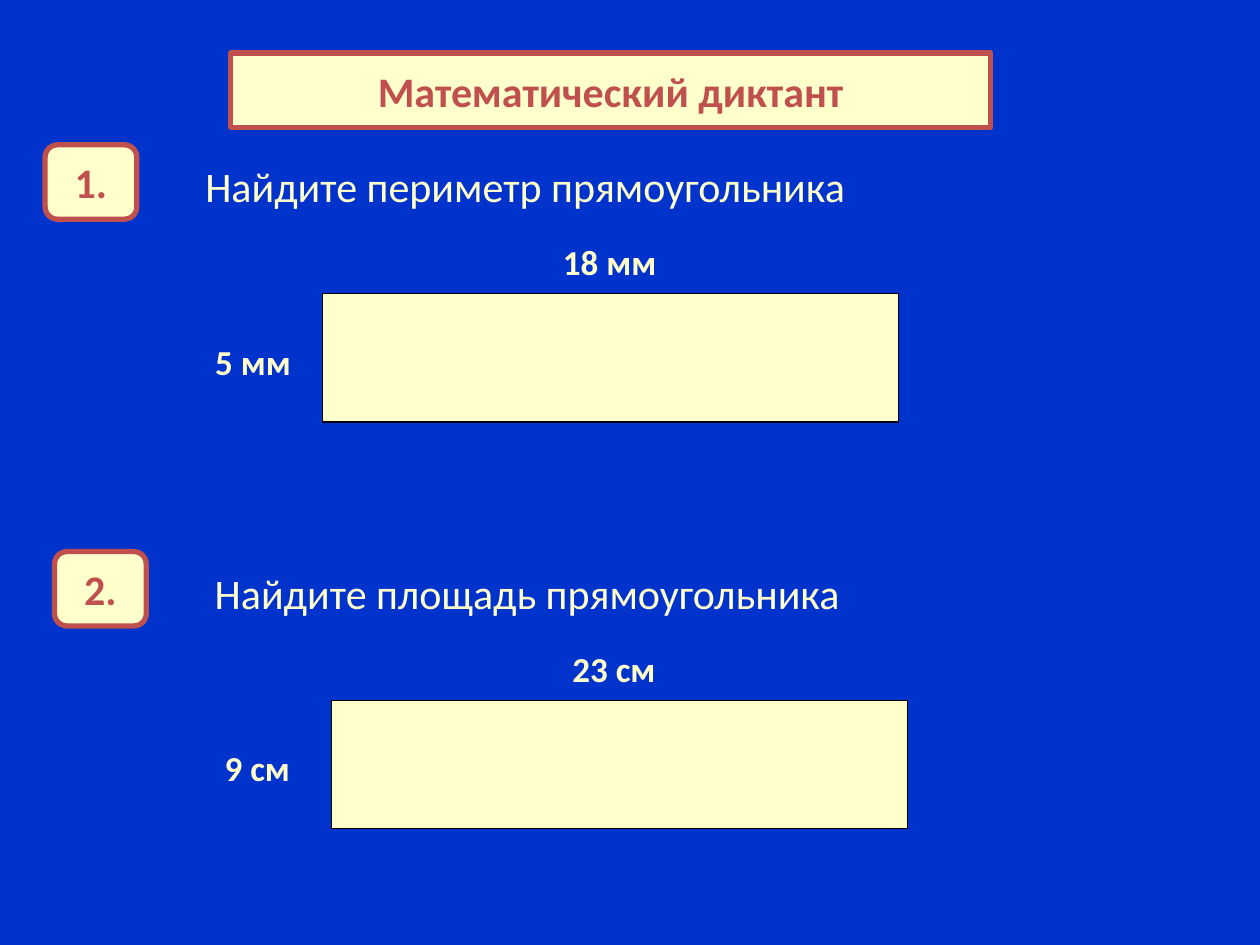
from lxml.etree import SubElement
from pptx import Presentation
from pptx.dml.color import RGBColor
from pptx.enum.shapes import MSO_SHAPE as SHAPE
from pptx.enum.text import MSO_ANCHOR as ANCHOR, MSO_AUTO_SIZE as FIT, PP_ALIGN as ALIGN
from pptx.oxml.ns import qn
from pptx.util import Cm, Pt

COLORS = {"blue": "0033CC", "cream": "FFFFCC", "red": "C0504D", "black": "000000"}
FONT = "Calibri"


def rgb(name):
    """Return the palette colour with this name."""
    return RGBColor.from_string(COLORS[name])


def write(sp, text, size=24, color="cream", bold=False, align=ALIGN.LEFT, anchor=ANCHOR.TOP):
    """Put one formatted line of text into a shape."""
    tf = sp.text_frame
    tf.word_wrap = True
    tf.auto_size = FIT.NONE
    tf.vertical_anchor = anchor
    p = tf.paragraphs[0]
    p.alignment = align
    r = p.add_run()
    r.text = text
    r.font.name, r.font.size, r.font.bold = FONT, Pt(size), bold
    r.font.color.rgb = rgb(color)


def paint(sp, line, width):
    """Give a shape the cream fill and an outline."""
    sp.fill.solid()
    sp.fill.fore_color.rgb = rgb("cream")
    sp.line.color.rgb = rgb(line)
    sp.line.width = Pt(width)


def frame(sp, text):
    """Style a shape as a red-framed caption."""
    paint(sp, "red", 3)
    write(sp, text, color="red", bold=True, align=ALIGN.CENTER, anchor=ANCHOR.MIDDLE)


def add_title(s, text):
    """Turn the title placeholder into a rounded caption."""
    sp = s.shapes.title
    sp.left, sp.top, sp.width, sp.height = Cm(4.65), Cm(1.07), Cm(15.32), Cm(1.5)
    geom = SubElement(sp.element.spPr, qn("a:prstGeom"), prst="roundRect")
    SubElement(geom, qn("a:avLst"))
    frame(sp, text)


def add_box(shapes, kind, x, y, w, h):
    """Add a preset shape without a shadow."""
    sp = shapes.add_shape(kind, Cm(x), Cm(y), Cm(w), Cm(h))
    sp.shadow.inherit = False
    return sp


def add_text(shapes, text, x, y, w, h, **fmt):
    """Add a text box with formatted text."""
    write(shapes.add_textbox(Cm(x), Cm(y), Cm(w), Cm(h)), text, **fmt)


def add_task(s, x, y, number, question, length, height):
    """Add a group with a numbered question and a labelled rectangle."""
    shapes = s.shapes.add_group_shape().shapes
    add_text(shapes, question, x + 2.98, y + 0.2, 18.42, 1.27)
    paint(add_box(shapes, SHAPE.RECTANGLE, x + 5.59, y + 3, 11.61, 2.59), "black", 0.75)
    for text, dx, dy in ((length, 10.19, 1.8), (height, 3.18, 3.81)):
        add_text(shapes, text, x + dx, y + dy, 4.19, 1.09, size=20, bold=True)
    frame(add_box(shapes, SHAPE.ROUNDED_RECTANGLE, x, y, 1.85, 1.5), number)


def main():
    """Build and save the slide."""
    prs = Presentation()
    prs.slide_width, prs.slide_height = Cm(25.4), Cm(19.05)
    s = prs.slides.add_slide(prs.slide_layouts[5])
    s.background.fill.solid()
    s.background.fill.fore_color.rgb = rgb("blue")
    add_title(s, "Математический диктант")
    add_task(s, 0.91, 2.92, "1.", "Найдите периметр прямоугольника", "18 мм", "5 мм")
    add_task(s, 1.1, 11.12, "2.", "Найдите площадь прямоугольника", "23 см", "9 см")
    prs.save("out.pptx")


if __name__ == "__main__":
    main()
